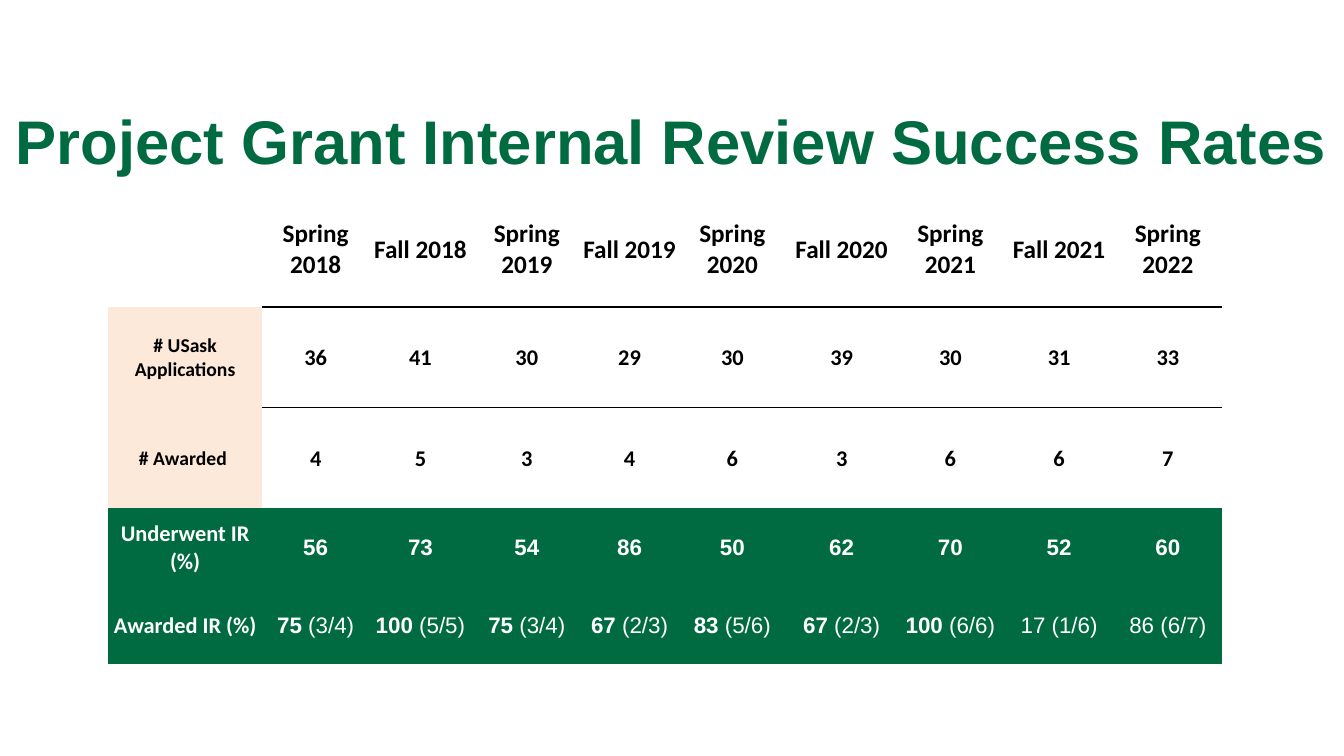
from lxml import etree
from pptx import Presentation
from pptx.dml.color import RGBColor
from pptx.enum.text import MSO_ANCHOR, PP_ALIGN
from pptx.oxml.ns import qn
from pptx.util import Cm, Pt

MIDDLE, TOP = MSO_ANCHOR.MIDDLE, MSO_ANCHOR.TOP
CENTER = PP_ALIGN.CENTER
GREEN, PEACH, BLACK, WHITE = "006A40", "FDE9D9", "000000", "FFFFFF"
NO_STYLE = "{2D5ABB26-0587-4C30-8999-92F81FD0307C}"

COLUMN_WIDTHS = [3.89, 2.69, 2.59, 2.77, 2.41, 2.77] + [2.74] * 4
ROW_HEIGHTS = [2.9, 2.54, 2.54, 1.96, 1.96]
TERMS = ["Spring\n2018", "Fall 2018", "Spring\n2019", "Fall 2019", "Spring\n2020",
         "Fall 2020", "Spring\n2021", "Fall 2021", "Spring 2022"]
APPLICATIONS = [36, 41, 30, 29, 30, 39, 30, 31, 33]
AWARDED = [4, 5, 3, 4, 6, 3, 6, 6, 7]
UNDERWENT = [56, 73, 54, 86, 50, 62, 70, 52, 60]
AWARDED_IR = [("75", "(3/4)"), ("100", "(5/5)"), ("75", "(3/4)"), ("67", "(2/3)"),
              ("83", "(5/6)"), ("67", "(2/3)"), ("100", "(6/6)"),
              ("", "17 (1/6)"), ("", "86 (6/7)")]


def color(hex_text):
    return RGBColor.from_string(hex_text)


class SlideBuilder:
    def __init__(self, page):
        self.page = page

    def style(self, paragraph, size, font_name, font_color, bold=True):
        paragraph.alignment = CENTER
        font = paragraph.font
        font.size, font.name, font.bold = Pt(size), font_name, bold
        font.color.rgb = color(font_color)

    def title(self, text, left, top, width, height):
        box = self.page.shapes.add_textbox(Cm(left), Cm(top), Cm(width), Cm(height))
        frame = box.text_frame
        frame.word_wrap = True
        frame.vertical_anchor = TOP
        frame.margin_left = frame.margin_right = frame.margin_bottom = 0
        frame.margin_top = Cm(0.25)
        frame.text = text
        self.style(frame.paragraphs[0], 44, "Arial", GREEN)

    def table(self, left, top, widths, heights):
        frame = self.page.shapes.add_table(
            len(heights), len(widths), Cm(left), Cm(top), Cm(sum(widths)), Cm(sum(heights)))
        table = frame.table
        table.first_row = table.horz_banding = False
        table._tbl.tblPr.find(qn("a:tableStyleId")).text = NO_STYLE
        for column, width in zip(table.columns, widths):
            column.width = Cm(width)
        for row, height in zip(table.rows, heights):
            row.height = Cm(height)
        return table

    def cell(self, cell, content, size, font_name="Calibri", font_color=BLACK, fill=None):
        """Fill a cell; a pair holds a bold span and a regular one."""
        cell.vertical_anchor = MIDDLE
        cell.margin_left = cell.margin_right = cell.margin_top = Cm(0.02)
        cell.margin_bottom = 0
        if fill:
            cell.fill.solid()
            cell.fill.fore_color.rgb = color(fill)
        else:
            cell.fill.background()
        frame = cell.text_frame
        if isinstance(content, tuple):
            strong, regular = content
            paragraph = frame.paragraphs[0]
            self.style(paragraph, size, font_name, font_color, bold=False)
            if strong:
                span = paragraph.add_run()
                span.text = strong + " "
                span.font.bold = True
            paragraph.add_run().text = regular
        else:
            frame.text = str(content)
            for paragraph in frame.paragraphs:
                self.style(paragraph, size, font_name, font_color)

    def border(self, cell, side):
        """Draw a black rule on side "T" or "B" of a cell."""
        line = etree.Element(qn(f"a:ln{side}"), w=str(Pt(1.5)))
        fill = etree.SubElement(line, qn("a:solidFill"))
        etree.SubElement(fill, qn("a:srgbClr"), val=BLACK)
        cell._tc.get_or_add_tcPr().insert(0, line)


def main():
    deck = Presentation()
    deck.slide_width, deck.slide_height = Cm(33.87), Cm(19.05)
    builder = SlideBuilder(deck.slides.add_slide(deck.slide_layouts[6]))
    builder.title("Project Grant Internal Review Success Rates", 0, 2.34, 33.87, 1.7)

    # label, label size, label fill, values, value size, value font, value fill, text colour
    rows = [
        ("", 18, None, TERMS, 18, "Calibri", WHITE, BLACK),
        ("# USask Applications", 14, PEACH, APPLICATIONS, 16, "Calibri", None, BLACK),
        ("# Awarded ", 14, PEACH, AWARDED, 16, "Calibri", None, BLACK),
        ("Underwent IR (%)", 16, GREEN, UNDERWENT, 16, "Arial", GREEN, WHITE),
        ("Awarded IR (%)", 16, GREEN, AWARDED_IR, 16, "Arial", GREEN, WHITE),
    ]
    table = builder.table(2.72, 4.83, COLUMN_WIDTHS, ROW_HEIGHTS)
    for row, (label, label_size, label_fill, values, size, font_name, fill, ink) in enumerate(rows):
        builder.cell(table.cell(row, 0), label, label_size, font_color=ink, fill=label_fill)
        for column, value in enumerate(values, start=1):
            builder.cell(table.cell(row, column), value, size, font_name, ink, fill)
    for column in range(1, len(COLUMN_WIDTHS)):
        builder.border(table.cell(0, column), "B")
        builder.border(table.cell(1, column), "T")

    deck.save("out.pptx")


if __name__ == "__main__":
    main()
